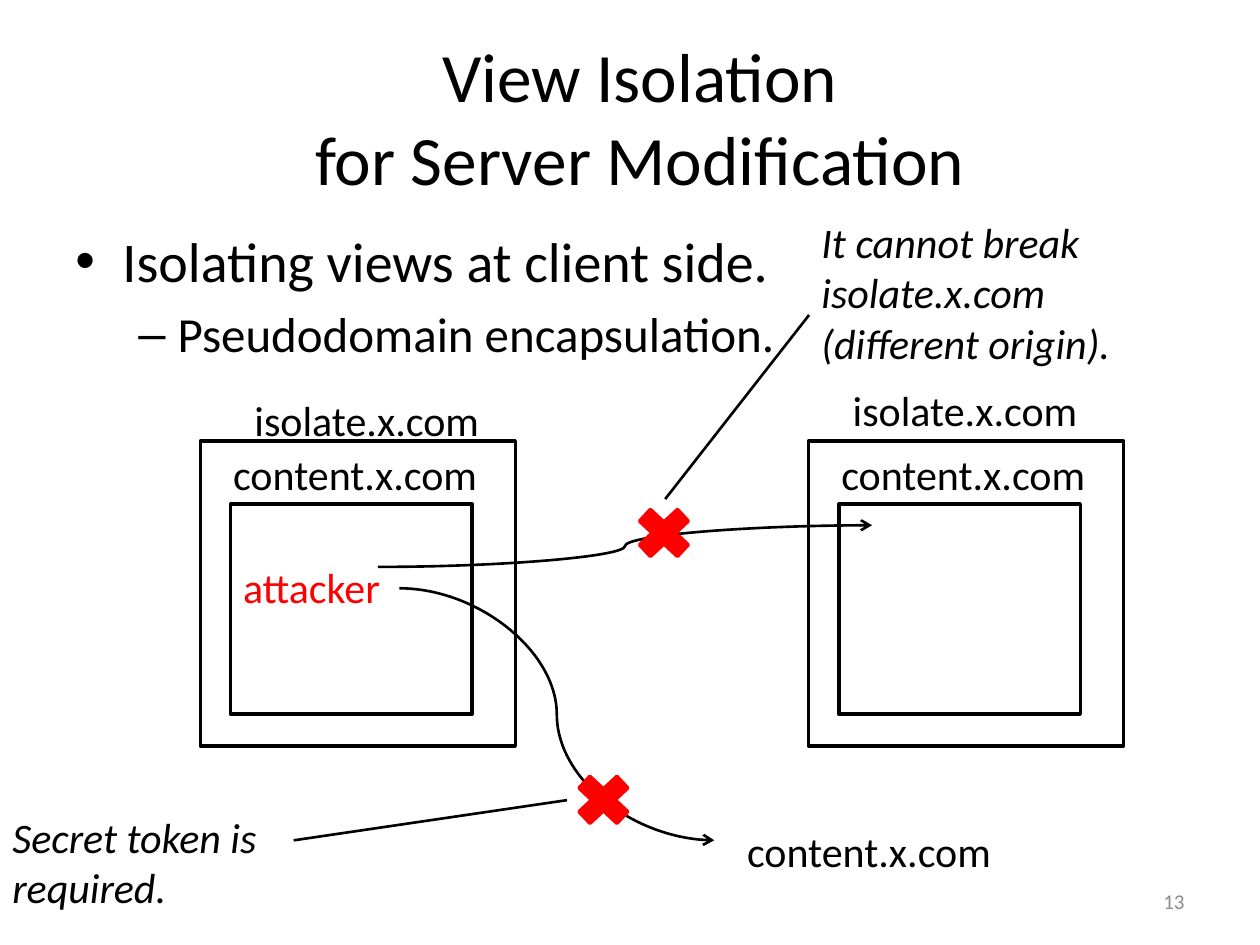
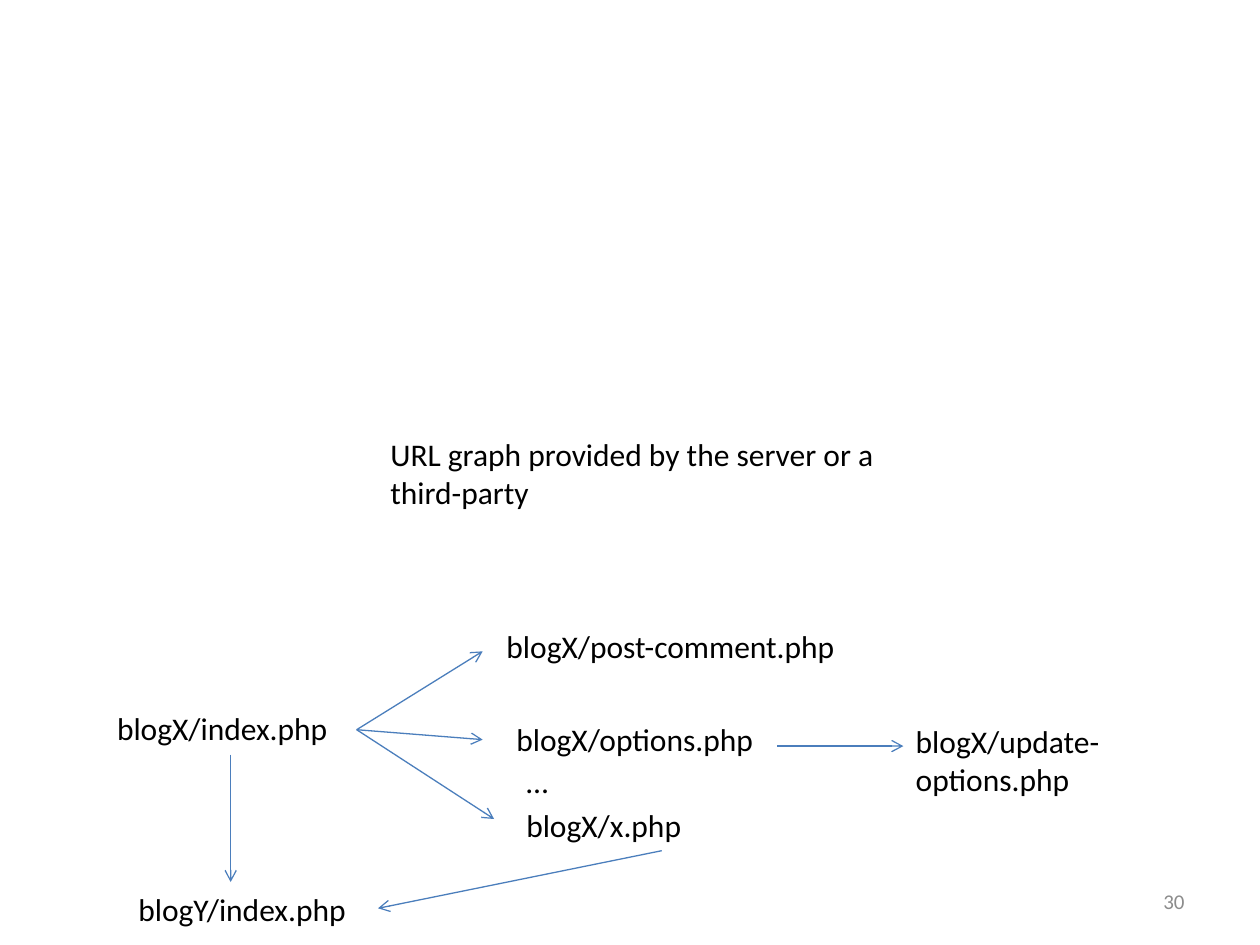
"""Build two slides on view isolation and a URL graph."""
from pptx import Presentation
from pptx.dml.color import RGBColor
from pptx.enum.shapes import MSO_CONNECTOR as Route, MSO_SHAPE as Preset
from pptx.enum.text import MSO_ANCHOR as Anchor, PP_ALIGN as Align
from pptx.oxml.ns import qn
from pptx.util import Cm, Pt
from lxml.etree import SubElement

BLACK, RED, BLUE, GREY = "000000", "FF0000", "4B7EBC", "8C8C8C"
FONT = "Calibri"
TITLE_ONLY, BLANK = 5, 6
LINE_HEIGHT = 1.27


def color(code):
    """Turn a hex string into a colour."""
    return RGBColor.from_string(code)


def apply_format(target, values):
    """Set every attribute named in values on target."""
    for name, value in values.items():
        setattr(target, name, value)


def style_font(paragraph, size, code=BLACK, italic=False):
    """Give a paragraph its font."""
    for run in paragraph.runs:
        apply_format(run.font, {"name": FONT, "size": Pt(size), "italic": italic})
        run.font.color.rgb = color(code)


def style_line(line, code, width):
    """Give an outline its colour and width."""
    line.color.rgb = color(code)
    line.width = Pt(width)


def add_title(slide, text):
    """Fill and place the title placeholder."""
    title = slide.shapes.title
    box = {"left": 1.47, "top": 0.76, "width": 22.86, "height": 3.18}
    apply_format(title, {name: Cm(value) for name, value in box.items()})
    title.text_frame.text = text
    title.text_frame.vertical_anchor = Anchor.MIDDLE
    heading = title.text_frame.paragraphs[0]
    heading.alignment = Align.CENTER
    style_font(heading, 39.6)


def add_label(slide, text, left, top, width, height=LINE_HEIGHT, size=24,
              code=BLACK, italic=False, level=0):
    """Add a wrapped text box and return its frame."""
    frame = slide.shapes.add_textbox(Cm(left), Cm(top), Cm(width), Cm(height)).text_frame
    apply_format(frame, {"word_wrap": True, "text": text})
    frame.paragraphs[0].level = level
    style_font(frame.paragraphs[0], size, code, italic)
    return frame


def add_page_number(slide, number):
    """Add the page number at the lower right."""
    frame = add_label(slide, number, 18.21, 17.65, 5.92, 1.02, 12, GREY)
    frame.vertical_anchor = Anchor.MIDDLE
    frame.paragraphs[0].alignment = Align.RIGHT


def add_bullets(slide, points):
    """Add bulleted text from (text, size, mark, margin, hanging) rows."""
    frame = slide.shapes.add_textbox(Cm(1.27), Cm(4.45), Cm(22.86), Cm(12.57)).text_frame
    frame.word_wrap = True
    for level, (text, size, mark, margin, hanging) in enumerate(points):
        point = frame.add_paragraph() if level else frame.paragraphs[0]
        apply_format(point, {"text": text, "level": level, "space_before": Pt(size * 0.2)})
        style_font(point, size)
        properties = point._p.get_or_add_pPr()
        properties.set("marL", str(Cm(margin)))
        properties.set("indent", str(-Cm(hanging)))
        SubElement(properties, qn("a:buFont")).set("typeface", "Arial")
        SubElement(properties, qn("a:buChar")).set("char", mark)


def add_shape(slide, preset, left, top, width, height, line=BLACK, fill=None):
    """Add a preset shape with a 2 pt outline."""
    shape = slide.shapes.add_shape(preset, Cm(left), Cm(top), Cm(width), Cm(height))
    shape.shadow.inherit = False
    style_line(shape.line, line, 2)
    if fill:
        shape.fill.solid()
        shape.fill.fore_color.rgb = color(fill)
    else:
        shape.fill.background()


def add_link(slide, start, end, code=BLACK, width=1.5, route=Route.STRAIGHT, arrow=True):
    """Connect two points, with an arrowhead at the end if asked."""
    link = slide.shapes.add_connector(route, *map(Cm, start + end))
    style_line(link.line, code, width)
    properties = link.element.spPr
    if arrow:
        SubElement(properties.find(qn("a:ln")), qn("a:tailEnd")).set("type", "arrow")
    SubElement(properties, qn("a:effectLst"))


def add_view(slide, left, outer_label_left, outer_label_top):
    """Add a content frame nested in an isolating frame."""
    add_shape(slide, Preset.RECTANGLE, left, 8.89, 6.35, 6.15)
    add_label(slide, "isolate.x.com", outer_label_left, outer_label_top, 5.08)
    add_shape(slide, Preset.RECTANGLE, left + 0.61, 10.16, 4.87, 4.24)
    add_label(slide, "content.x.com", left + 0.41, 8.92, 5.5)


def add_blocked_path(slide, start, end, cross_left, cross_top):
    """Add a curved arrow with a red cross on it."""
    add_link(slide, start, end, route=Route.CURVE)
    add_shape(slide, Preset.MATH_MULTIPLY, cross_left, cross_top, 1.47, 1.37, RED, RED)


def build_isolation(deck):
    """Build the view isolation slide."""
    slide = deck.slides.add_slide(deck.slide_layouts[TITLE_ONLY])
    add_title(slide, "View Isolation\vfor Server Modification")
    add_bullets(slide, [
        ("Isolating views at client side.", 32, "•", 0.95, 0.95),
        ("Pseudodomain encapsulation.", 28, "–", 2.06, 0.79),
    ])
    add_view(slide, 4.04, 4.88, 7.82)
    add_view(slide, 16.3, 16.94, 7.62)
    add_label(slide, "attacker", 4.65, 11.2, 3.38, code=RED)
    add_blocked_path(slide, (7.62, 11.43), (17.58, 10.59), 12.65, 10.06)
    add_blocked_path(slide, (8.05, 11.86), (14.4, 16.94), 11.43, 15.44)
    add_label(slide, "content.x.com", 14.81, 16.51, 5.72)
    add_link(slide, (13.41, 10.06), (16.31, 6.35), arrow=False)
    add_label(slide, "It cannot break isolate.x.com (different origin).",
              16.31, 4.24, 6.99, 3.33, italic=True)
    add_link(slide, (11.43, 16.13), (5.92, 16.94), arrow=False)
    add_label(slide, "Secret token is required.", 0, 16.23, 6.99, 2.31, italic=True)
    add_page_number(slide, "13")


def build_url_graph(deck):
    """Build the URL graph slide."""
    slide = deck.slides.add_slide(deck.slide_layouts[BLANK])
    add_label(slide, "URL graph provided by the server or a third-party",
              6.35, 8.64, 12.7, 1.8, 18, level=1)
    pages = [
        ("blogX/index.php", 2.11, 14.17, 5.08, 1.02),
        ("blogX/post-comment.php", 9.96, 12.52, 8.69, 1.02),
        ("blogX/options.php", 10.16, 14.4, 6.35, 1.02),
        ("blogX/update-options.php", 18.21, 14.43, 6.35, 1.8),
        ("blogX/x.php", 10.36, 16.13, 6.35, 1.02),
        ("…", 10.36, 15.24, 6.35, 1.02),
        ("blogY/index.php", 2.54, 17.81, 5.08, 1.02),
    ]
    for page in pages:
        add_label(slide, *page, size=18)
    index_exit = (7.19, 14.71)
    links = [
        (index_exit, (9.73, 13.13)),
        (index_exit, (9.73, 14.91)),
        (index_exit, (9.96, 16.51)),
        ((15.67, 15.04), (18.21, 15.04)),
        ((4.65, 15.21), (4.65, 17.78)),
        ((13.34, 17.15), (7.62, 18.31)),
    ]
    for start, end in links:
        add_link(slide, start, end, BLUE, 0.75)
    add_page_number(slide, "30")


def main():
    """Build and save the deck."""
    deck = Presentation()
    apply_format(deck, {"slide_width": Cm(25.4), "slide_height": Cm(19.05)})
    build_isolation(deck)
    build_url_graph(deck)
    deck.save("out.pptx")


if __name__ == "__main__":
    main()
